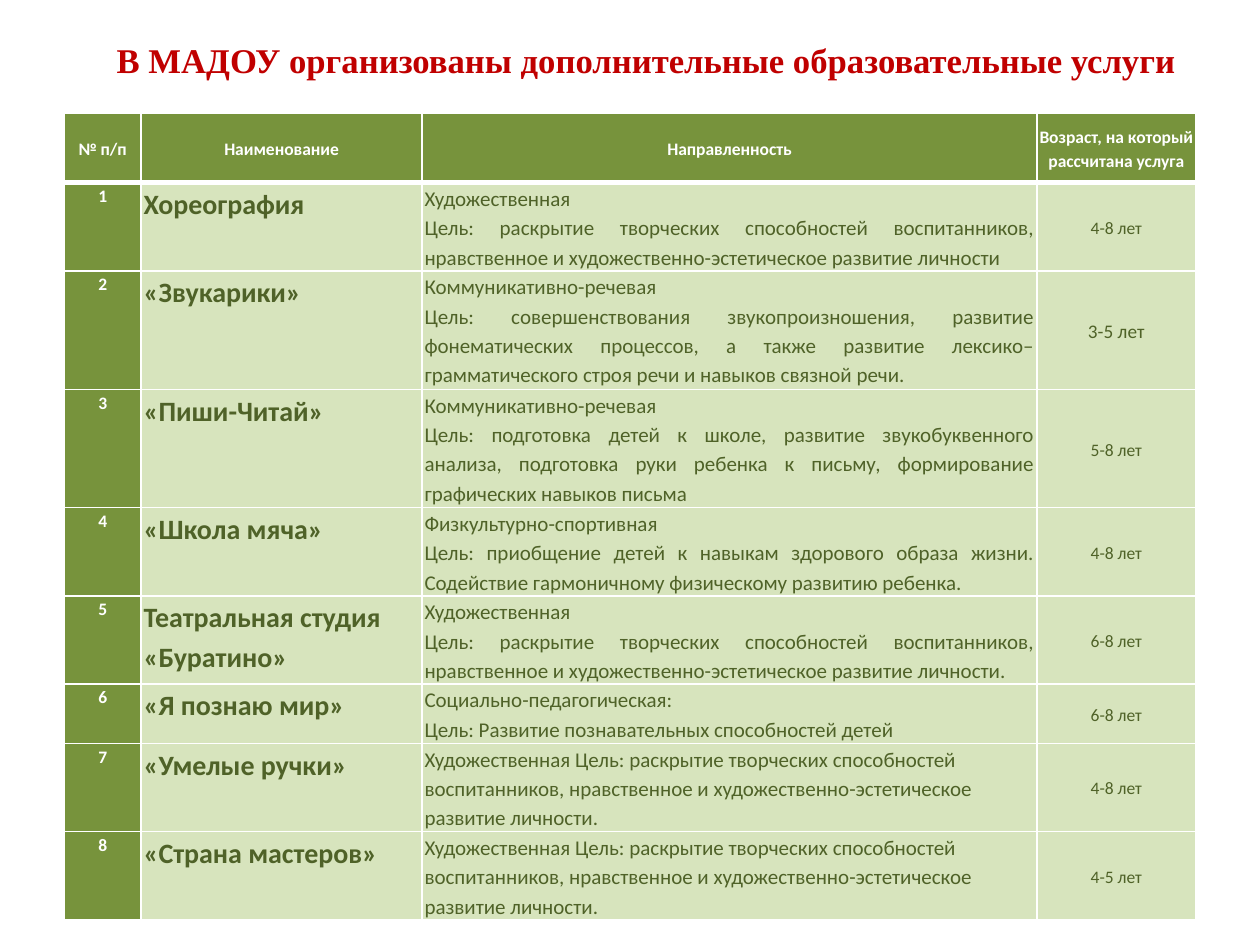
"""Build a slide with a table of additional educational services."""
from dataclasses import dataclass

from lxml import etree
from pptx import Presentation
from pptx.dml.color import RGBColor
from pptx.enum.text import MSO_ANCHOR, PP_ALIGN
from pptx.oxml.ns import qn
from pptx.util import Inches, Pt

CENTER, LEFT, JUSTIFY = PP_ALIGN.CENTER, PP_ALIGN.LEFT, PP_ALIGN.JUSTIFY
TOP, MIDDLE = MSO_ANCHOR.TOP, MSO_ANCHOR.MIDDLE
RED = RGBColor(0xC0, 0x00, 0x00)
WHITE = RGBColor(0xFF, 0xFF, 0xFF)
GREEN = RGBColor(0x77, 0x93, 0x3C)
LIGHT_GREEN = RGBColor(0xD7, 0xE4, 0xBD)
DARK_GREEN = RGBColor(0x4F, 0x62, 0x28)

TITLE = "В МАДОУ организованы дополнительные образовательные услуги"
HEADERS = ("№ п/п", "Наименование", "Направленность",
           "Возраст, на который рассчитана услуга")
COL_WIDTHS = (0.61, 2.23, 4.88, 1.26)
HEADER_HEIGHT = 0.55
ART_GOAL = ("Цель: раскрытие творческих способностей воспитанников, "
            "нравственное и художественно-эстетическое развитие личности")
ART_LINE = f"Художественная {ART_GOAL}."


@dataclass
class Service:
    """One row of the services table."""
    name: str
    lines: tuple[str, ...]
    age: str
    height: float = 0.7
    align: PP_ALIGN = JUSTIFY
    age_size: float = 10


@dataclass
class Style:
    """Look of a table cell."""
    size: float
    bold: bool
    color: RGBColor
    fill: RGBColor
    align: PP_ALIGN = CENTER
    anchor: MSO_ANCHOR = MIDDLE
    top: float = 1
    bottom: float = 1


SERVICES = (
    Service("Хореография", ("Художественная ", ART_GOAL), "4-8 лет"),
    Service("«Звукарики»", (
        "Коммуникативно-речевая",
        "Цель: совершенствования звукопроизношения, развитие фонематических "
        "процессов, а также развитие лексико–грамматического строя речи и "
        "навыков связной речи."), "3-5 лет", 0.94, age_size=11),
    Service("«Пиши-Читай»", (
        "Коммуникативно-речевая",
        "Цель: подготовка детей к школе, развитие звукобуквенного анализа, "
        "подготовка руки ребенка к письму, формирование графических навыков "
        "письма"), "5-8 лет", 0.94),
    Service("«Школа мяча»", (
        "Физкультурно-спортивная ",
        "Цель: приобщение детей к навыкам здорового образа жизни. "
        "Содействие гармоничному физическому развитию ребенка."), "4-8 лет"),
    Service("Театральная студия «Буратино»",
            ("Художественная ", f"{ART_GOAL}."), "6-8 лет"),
    Service("«Я познаю мир»", (
        "Социально-педагогическая:",
        "Цель: Развитие познавательных способностей детей"), "6-8 лет", 0.47),
    Service("«Умелые ручки»", (ART_LINE,), "4-8 лет", align=LEFT),
    Service("«Страна мастеров»", (ART_LINE,), "4-5 лет", align=LEFT),
)


def add_title(s) -> None:
    """Add the slide heading."""
    tf = s.shapes.add_textbox(Inches(0.67), Inches(0.13),
                              Inches(8.91), Inches(0.69)).text_frame
    tf.word_wrap = True
    tf.vertical_anchor = MIDDLE
    p = tf.paragraphs[0]
    p.text = TITLE
    p.alignment = CENTER
    p.font.name = "Times New Roman"
    p.font.size = Pt(19.8)
    p.font.bold = True
    p.font.color.rgb = RED


def add_borders(cell, top: float, bottom: float) -> None:
    """Give a cell white borders, widths in points."""
    tc_pr = cell._tc.get_or_add_tcPr()
    for side, width in (("L", 1), ("R", 1), ("T", top), ("B", bottom)):
        ln = etree.SubElement(tc_pr, qn(f"a:ln{side}"), w=str(Pt(width)))
        fill = etree.SubElement(ln, qn("a:solidFill"))
        etree.SubElement(fill, qn("a:srgbClr"), val=str(WHITE))


def fill_cell(cell, lines: tuple[str, ...], style: Style) -> None:
    """Write the lines into a cell and style it."""
    add_borders(cell, style.top, style.bottom)
    cell.fill.solid()
    cell.fill.fore_color.rgb = style.fill
    cell.margin_left = cell.margin_right = Inches(0.02)
    cell.margin_top = cell.margin_bottom = 0
    cell.vertical_anchor = style.anchor
    tf = cell.text_frame
    tf.text = "\n".join(lines)
    for p in tf.paragraphs:
        p.alignment = style.align
        p.line_spacing = 1.15
        p.font.name = "Calibri"
        p.font.size = Pt(style.size)
        p.font.bold = style.bold
        p.font.color.rgb = style.color


def add_services(s) -> None:
    """Add the table of services."""
    heights = (HEADER_HEIGHT, *(service.height for service in SERVICES))
    table = s.shapes.add_table(
        len(heights), len(COL_WIDTHS), Inches(0.51), Inches(0.9),
        Inches(sum(COL_WIDTHS)), Inches(sum(heights))).table
    for column, width in zip(table.columns, COL_WIDTHS):
        column.width = Inches(width)
    for row, height in zip(table.rows, heights):
        row.height = Inches(height)
    for cell, header in zip(table.rows[0].cells, HEADERS):
        fill_cell(cell, (header,), Style(10, True, WHITE, GREEN, bottom=3))
    for i, service in enumerate(SERVICES, 1):
        top = 3 if i == 1 else 1
        contents = (
            ((str(i),), Style(10, True, WHITE, GREEN, CENTER, TOP, top)),
            ((service.name,),
             Style(16, True, DARK_GREEN, LIGHT_GREEN, LEFT, TOP, top)),
            (service.lines, Style(12, False, DARK_GREEN, LIGHT_GREEN,
                                  service.align, TOP, top)),
            ((service.age,), Style(service.age_size, False, DARK_GREEN,
                                   LIGHT_GREEN, top=top)),
        )
        for cell, (lines, style) in zip(table.rows[i].cells, contents):
            fill_cell(cell, lines, style)


def main() -> None:
    """Build and save the presentation."""
    prs = Presentation()
    prs.slide_width, prs.slide_height = Inches(10), Inches(7.5)
    s = prs.slides.add_slide(prs.slide_layouts[6])
    add_title(s)
    add_services(s)
    prs.save("out.pptx")


if __name__ == "__main__":
    main()
